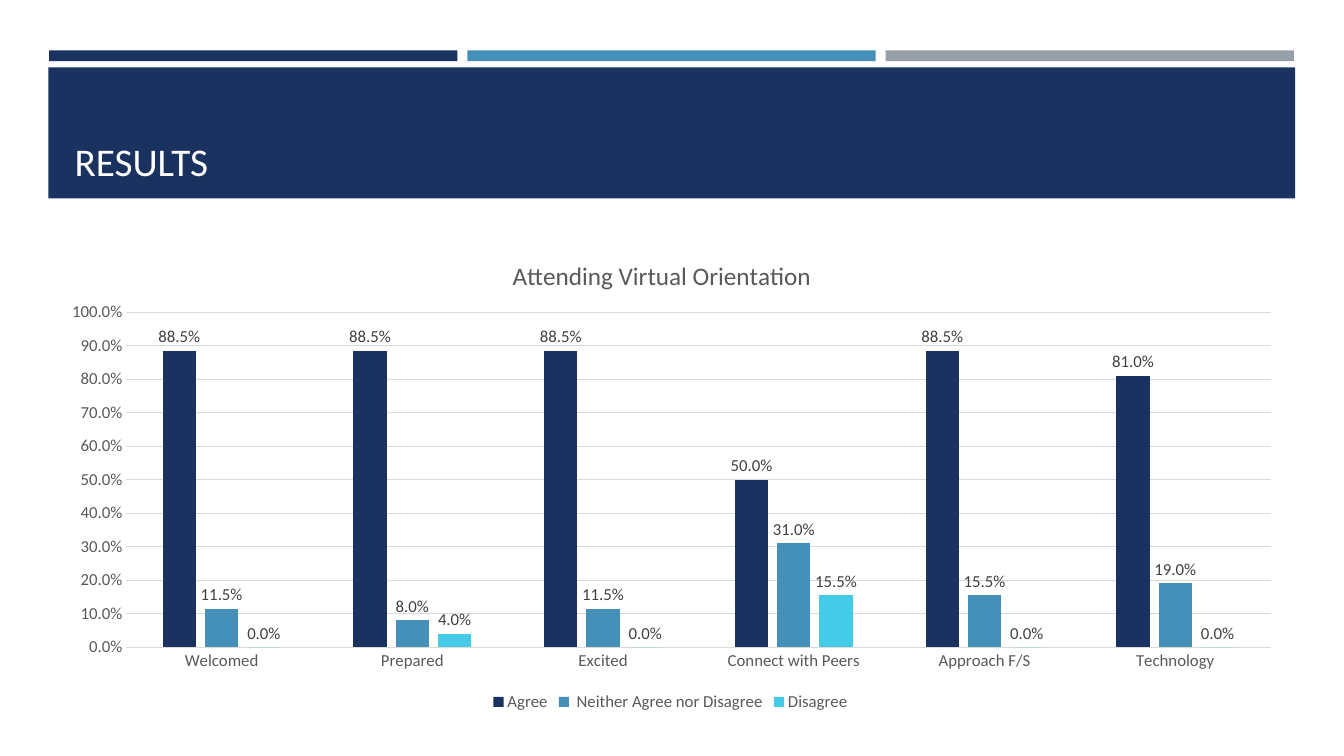
import pptx
import pptx.chart.data
import pptx.dml.color
import pptx.enum.chart
import pptx.enum.text
import pptx.oxml
import pptx.oxml.ns
import pptx.util
from dataclasses import dataclass
from pptx.util import Cm


@dataclass(frozen=True)
class Theme:
    font: str = "Calibri"
    navy: str = "1A3260"
    blue: str = "4590B8"
    cyan: str = "45CBE8"
    grey: str = "969FA7"
    white: str = "FFFFFF"
    text: str = "595959"
    label: str = "404040"
    rule: str = "D9D9D9"
    title_size: int = 28
    chart_title_size: int = 18
    chart_size: int = 12


THEME = Theme()
CATEGORIES = ["Welcomed", "Prepared", "Excited", "Connect with Peers",
              "Approach F/S", "Technology"]
SERIES = [
    ("Agree", [0.885, 0.885, 0.885, 0.5, 0.885, 0.81], THEME.navy),
    (" Neither Agree nor Disagree", [0.115, 0.08, 0.115, 0.31, 0.155, 0.19], THEME.blue),
    ("Disagree", [0, 0.04, 0, 0.155, 0, 0], THEME.cyan),
]


def rgb(color):
    return pptx.dml.color.RGBColor.from_string(color)


def set_font(font, size, color):
    font.name = THEME.font
    font.size = pptx.util.Pt(size)
    font.bold = False
    font.color.rgb = rgb(color)


def set_line(line, color):
    line.color.rgb = rgb(color)
    line.width = pptx.util.Pt(0.75)


def add_block(s, left, top, width, height, color):
    sp = s.shapes.add_shape(pptx.enum.shapes.MSO_SHAPE.RECTANGLE,
                            Cm(left), Cm(top), Cm(width), Cm(height))
    sp.shadow.inherit = False
    sp.fill.solid()
    sp.fill.fore_color.rgb = rgb(color)
    sp.line.fill.background()


def add_heading(s, text):
    sp = s.shapes.add_textbox(Cm(1.63), Cm(1.96), Cm(30.63), Cm(2.82))
    tf = sp.text_frame
    tf.word_wrap = True
    tf.vertical_anchor = pptx.enum.text.MSO_ANCHOR.BOTTOM
    r = tf.paragraphs[0].add_run()
    r.text = text
    set_font(r.font, THEME.title_size, THEME.white)


def make_layout(x, y, size=None):
    """Manual chart layout in fractions of the chart frame."""
    items = [("xMode", "edge"), ("yMode", "edge"), ("x", x), ("y", y)]
    if size:
        items.insert(0, ("layoutTarget", "inner"))
        items += [("w", size[0]), ("h", size[1])]
    body = "".join(f'<c:{tag} val="{val}"/>' for tag, val in items)
    return pptx.oxml.parse_xml(
        f'<c:layout {pptx.oxml.ns.nsdecls("c")}>'
        f'<c:manualLayout>{body}</c:manualLayout></c:layout>')


def place(element, layout, index):
    for old in element.findall(pptx.oxml.ns.qn("c:layout")):
        element.remove(old)
    element.insert(index, layout)


def style_title(chart, text):
    chart.has_title = True
    title = chart.chart_title
    r = title.text_frame.paragraphs[0].add_run()
    r.text = text
    set_font(r.font, THEME.chart_title_size, THEME.text)
    title.include_in_layout = False
    place(title._element, make_layout(0.37, 0.05), 1)


def style_axes(chart):
    none = pptx.enum.chart.XL_TICK_MARK.NONE
    for axis in (chart.category_axis, chart.value_axis):
        axis.major_tick_mark = axis.minor_tick_mark = none
        set_font(axis.tick_labels.font, THEME.chart_size, THEME.text)
    set_line(chart.category_axis.format.line, THEME.rule)
    values = chart.value_axis
    values.minimum_scale, values.maximum_scale, values.major_unit = 0, 1, 0.1
    values.format.line.fill.background()
    set_line(values.major_gridlines.format.line, THEME.rule)
    values.tick_labels.number_format = "0.0%"
    values.tick_labels.number_format_is_linked = False


def style_series(series, color):
    series.format.fill.solid()
    series.format.fill.fore_color.rgb = rgb(color)
    series.invert_if_negative = False
    labels = series.data_labels
    labels.show_value = True
    labels.position = pptx.enum.chart.XL_LABEL_POSITION.OUTSIDE_END
    labels.number_format = "0.0%"
    labels.number_format_is_linked = False
    set_font(labels.font, THEME.chart_size, THEME.label)


def add_column_chart(s, title):
    data = pptx.chart.data.CategoryChartData(number_format="0.0%")
    data.categories = CATEGORIES
    for name, values, _ in SERIES:
        data.add_series(name, values)
    chart = s.shapes.add_chart(
        pptx.enum.chart.XL_CHART_TYPE.COLUMN_CLUSTERED,
        Cm(1.17), Cm(5.77), Cm(31.45), Cm(12.27), data).chart
    set_font(chart.font, THEME.chart_size, THEME.text)
    style_title(chart, title)
    style_axes(chart)

    plot = chart.plots[0]
    plot.gap_width, plot.overlap = 219, -27
    plot.vary_by_categories = False
    for series, (_, _, color) in zip(plot.series, SERIES):
        style_series(series, color)

    chart.has_legend = True
    chart.legend.position = pptx.enum.chart.XL_LEGEND_POSITION.BOTTOM
    chart.legend.include_in_layout = False
    set_font(chart.legend.font, THEME.chart_size, THEME.text)
    plot_area = chart._chartSpace.chart.plotArea
    place(plot_area, make_layout(0.064, 0.171, (0.917, 0.688)), 0)


def main():
    prs = pptx.Presentation()
    prs.slide_width, prs.slide_height = Cm(33.87), Cm(19.05)
    s = prs.slides.add_slide(prs.slide_layouts[6])

    # Accent strips above the banner
    for i, color in enumerate((THEME.navy, THEME.blue, THEME.grey)):
        add_block(s, 1.24 + i * 10.54, 1.27, 10.29, 0.27, color)

    # Banner with heading
    add_block(s, 1.22, 1.7, 31.42, 3.3, THEME.navy)
    add_heading(s, "RESULTS")

    # Survey results
    add_column_chart(s, "Attending Virtual Orientation")
    prs.save("out.pptx")


if __name__ == "__main__":
    main()
